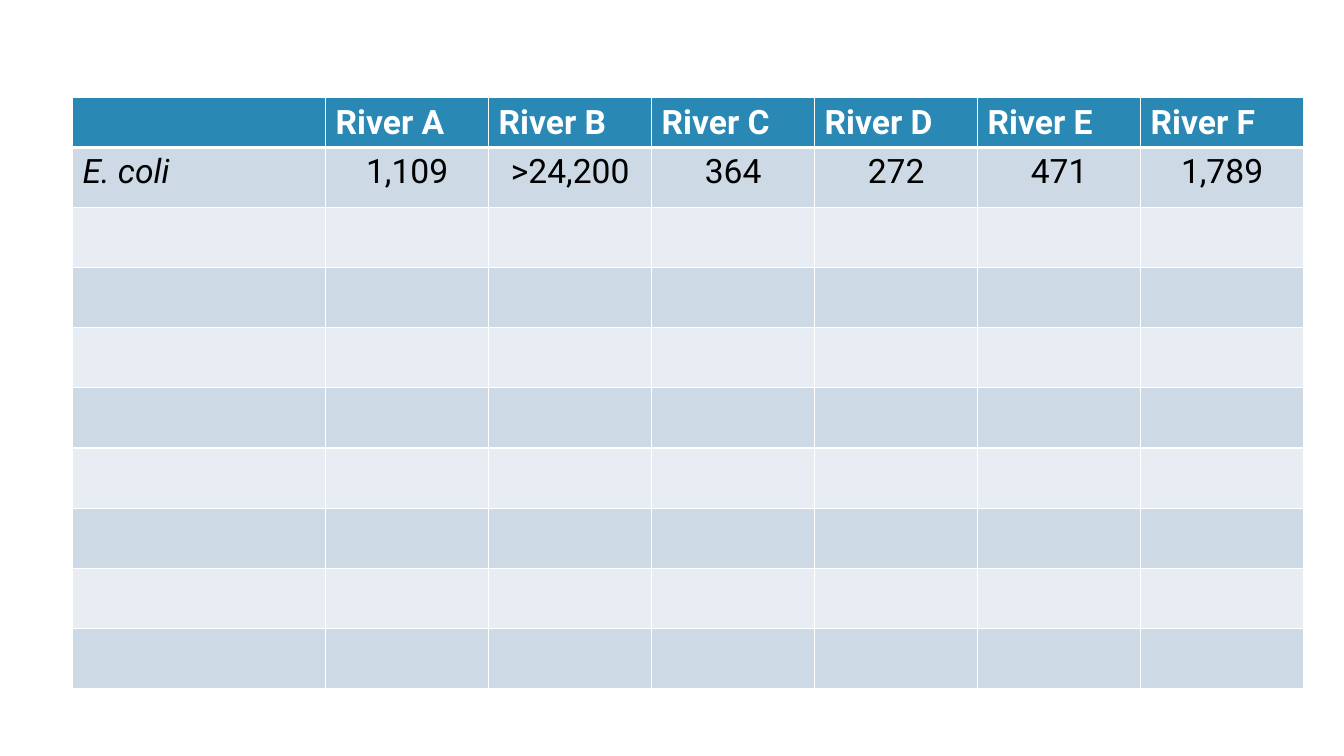
from lxml import etree
from pptx import Presentation
from pptx.dml.color import RGBColor
from pptx.enum import text
from pptx.oxml import ns
from pptx.util import Inches, Pt

COLORS = {
    "header": "2A88B5",
    "odd": "CDDAE5",
    "even": "E8EDF3",
    "white": "FFFFFF",
    "black": "000000",
}
FONT = "Roboto"
ROW_COUNT = 10
HEADER_HEIGHT = 0.48
LABEL_WIDTH = 2.51
COUNTS = {
    "River A": "1,109",
    "River B": ">24,200",
    "River C": "364",
    "River D": "272",
    "River E": "471",
    "River F": "1,789",
}


def color(name):
    return RGBColor.from_string(COLORS[name])


def add_borders(cell, widths):
    properties = cell._tc.get_or_add_tcPr()
    for side, width in widths.items():
        line = etree.SubElement(properties, ns.qn(f"a:ln{side}"), w=str(Pt(width)))
        fill = etree.SubElement(line, ns.qn("a:solidFill"))
        etree.SubElement(fill, ns.qn("a:srgbClr"), val=COLORS["white"])


def write_cell(cell, words, is_header, is_label):
    para = cell.text_frame.paragraphs[0]
    if not is_header and not is_label:
        para.alignment = text.PP_ALIGN.CENTER
    span = para.add_run()
    span.text = words
    span.font.name = FONT
    span.font.size = Pt(24)
    span.font.bold = is_header
    span.font.italic = is_label and not is_header
    span.font.color.rgb = color("white" if is_header else "black")


def add_river_table(page, left, top, width, height):
    rows = [["", *COUNTS], ["E. coli", *COUNTS.values()]]
    column_count = len(rows[0])
    rows += [[""] * column_count for _ in range(ROW_COUNT - len(rows))]
    table = page.shapes.add_table(
        ROW_COUNT, column_count, Inches(left), Inches(top), Inches(width), Inches(height)
    ).table

    river_width = (width - LABEL_WIDTH) / (column_count - 1)
    for index, column in enumerate(table.columns):
        column.width = Inches(river_width if index else LABEL_WIDTH)
    body_height = (height - HEADER_HEIGHT) / (ROW_COUNT - 1)

    for row_index, row in enumerate(rows):
        is_header = row_index == 0
        table.rows[row_index].height = Inches(HEADER_HEIGHT if is_header else body_height)
        fill_name = "header" if is_header else "odd" if row_index % 2 else "even"
        widths = {"L": 1, "R": 1, "T": 3 if row_index == 1 else 1, "B": 3 if is_header else 1}
        for column_index, words in enumerate(row):
            cell = table.cell(row_index, column_index)
            add_borders(cell, widths)
            cell.fill.solid()
            cell.fill.fore_color.rgb = color(fill_name)
            if words:
                write_cell(cell, words, is_header, column_index == 0)


def main():
    deck = Presentation()
    deck.slide_width = Inches(13.33)
    deck.slide_height = Inches(7.5)
    page = deck.slides.add_slide(deck.slide_layouts[6])
    add_river_table(page, 0.72, 0.97, 12.21, 5.85)
    deck.save("out.pptx")


if __name__ == "__main__":
    main()
